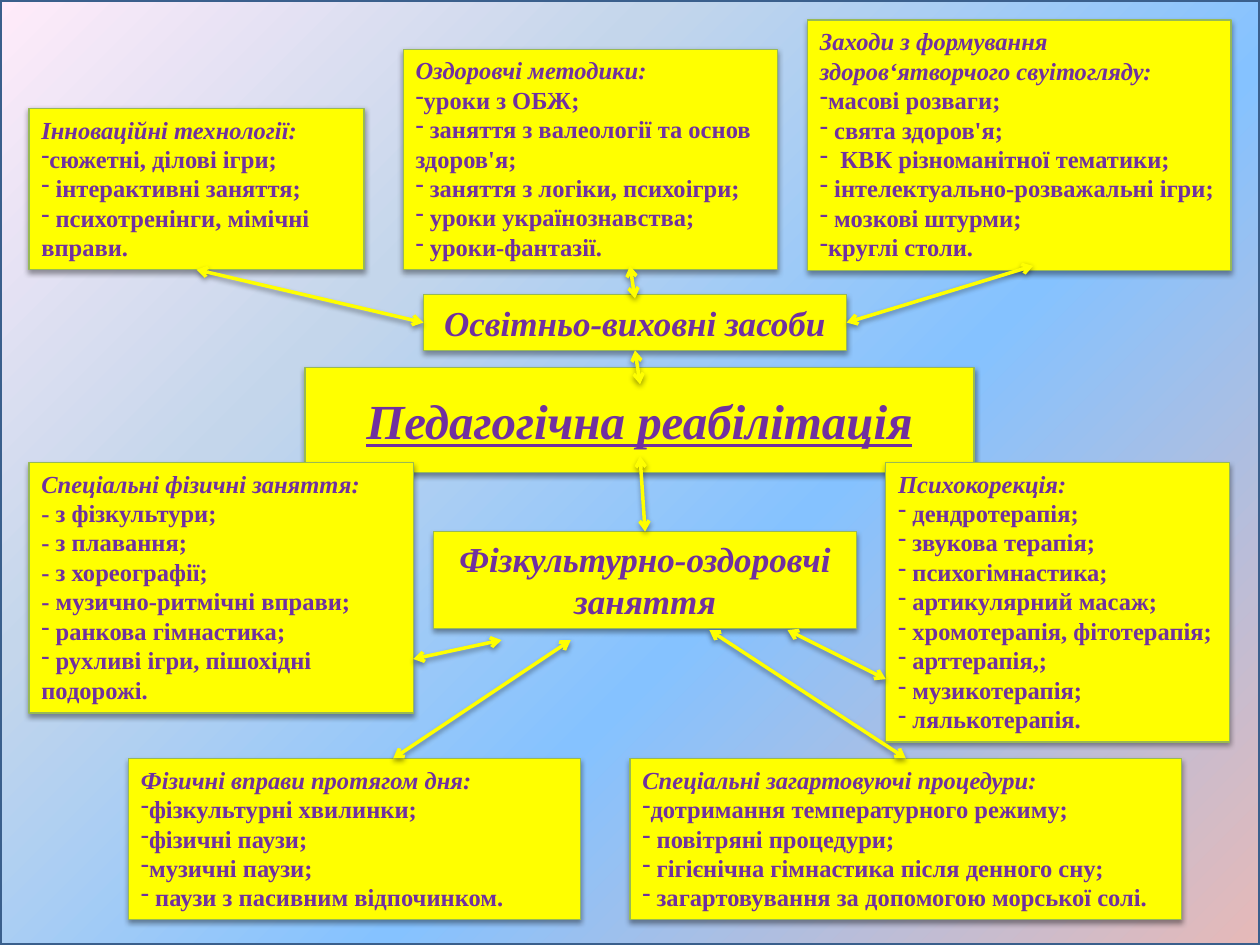
from lxml import etree
from pptx import Presentation
from pptx.dml.color import RGBColor
from pptx.enum import shapes, text
from pptx.oxml import parse_xml
from pptx.oxml.ns import nsdecls, qn
from pptx.util import Inches, Pt

COLORS = {"box": "FFFF00", "border": "98B955", "text": "7030A0",
          "arrow": "FFFF00", "frame": "3A5F8C", "shadow": "000000"}
GRADIENT = [(0, "254061"), (0, "E6B9B8"), (40, "85C2FF"), (70, "C4D6EB"), (100, "FFEBFA")]
FONT = "Times New Roman"

TITLE = ("Педагогічна реабілітація", (2.42, 3.05, 5.31, 0.57))
HEADINGS = [
    ("Фізкультурно-оздоровчі заняття", (3.44, 4.22, 3.36, 0.77)),
    ("Освітньо-виховні засоби", (3.36, 2.34, 3.36, 0.44)),
]
# Each list: place, heading, lines with a typed dash, lines with a dash bullet
LISTS = [
    ((0.23, 3.67, 3.05, 1.99), "Спеціальні фізичні заняття:",
     ["- з фізкультури;", "- з плавання;", "- з хореографії;", "- музично-ритмічні вправи;"],
     [" ранкова гімнастика;", " рухливі ігри, пішохідні подорожі."]),
    ((1.02, 6.02, 3.59, 1.28), "Фізичні вправи протягом дня:", [],
     ["фізкультурні хвилинки;", "фізичні паузи;", "музичні паузи;",
      " паузи з пасивним відпочинком."]),
    ((7.03, 3.67, 2.73, 2.22), "Психокорекція:", [],
     [" дендротерапія;", " звукова терапія;", " психогімнастика;", " артикулярний масаж;",
      " хромотерапія, фітотерапія;", " арттерапія,;", " музикотерапія;", " лялькотерапія."]),
    ((3.2, 0.39, 2.97, 1.75), "Оздоровчі методики:", [],
     ["уроки з ОБЖ;", " заняття з валеології та основ здоров'я;",
      " заняття з логіки, психоігри;", " уроки українознавства;", " уроки-фантазії."]),
    ((0.23, 0.86, 2.66, 1.28), "Інноваційні технології:", [],
     ["сюжетні, ділові ігри;", " інтерактивні заняття;", " психотренінги, мімічні вправи."]),
    ((6.41, 0.16, 3.36, 1.99), "Заходи з формування здоров‘ятворчого свуітогляду:", [],
     ["масові розваги;", " свята здоров'я;", "  КВК різноманітної тематики;",
      " інтелектуально-розважальні ігри;", " мозкові штурми;", "круглі столи."]),
    ((5, 6.02, 4.38, 1.28), "Спеціальні загартовуючі процедури:", [],
     ["дотримання температурного режиму;", " повітряні процедури;",
      " гігієнічна гімнастика після денного сну;",
      " загартовування за допомогою морської солі."]),
]
ARROWS = [
    (5.12, 4.22, 5.08, 3.62), (7.19, 6.02, 5.63, 5), (7.03, 5.39, 6.25, 5),
    (3.28, 5.23, 3.98, 5.08), (3.12, 6.02, 4.53, 5.08), (5.08, 3.05, 5.04, 2.78),
    (5.04, 2.37, 5, 2.11), (6.72, 2.56, 8.2, 2.11), (1.56, 2.14, 3.36, 2.56),
]


def rgb(name):
    return RGBColor.from_string(COLORS[name])


def add_shadow(properties):
    properties.append(parse_xml(
        f'<a:effectLst {nsdecls("a")}>'
        '<a:outerShdw blurRad="40000" dist="20000" dir="5400000" rotWithShape="0">'
        f'<a:srgbClr val="{COLORS["shadow"]}"><a:alpha val="38000"/></a:srgbClr>'
        '</a:outerShdw></a:effectLst>'))


def add_background(slide, deck):
    """Full-slide gradient rectangle, sent behind everything else."""
    panel = slide.shapes.add_shape(shapes.MSO_SHAPE.RECTANGLE, 0, 0,
                                   deck.slide_width, deck.slide_height)
    panel.shadow.inherit = False
    panel.line.color.rgb = rgb("frame")
    panel.line.width = Pt(2)
    stops = "".join(f'<a:gs pos="{share * 1000}"><a:srgbClr val="{color}"/></a:gs>'
                    for share, color in GRADIENT)
    gradient = parse_xml(
        f'<a:gradFill {nsdecls("a")} rotWithShape="1"><a:gsLst>{stops}</a:gsLst>'
        '<a:path path="circle"><a:fillToRect l="100000" t="100000"/></a:path></a:gradFill>')
    panel.element.spPr.find(qn("a:prstGeom")).addnext(gradient)
    slide.shapes.element.insert(2, panel.element)


def style_box(box):
    box.fill.solid()
    box.fill.fore_color.rgb = rgb("box")
    box.line.color.rgb = rgb("border")
    box.line.width = Pt(0.75)
    add_shadow(box.element.spPr)
    box.text_frame.word_wrap = True
    box.text_frame.auto_size = text.MSO_AUTO_SIZE.SHAPE_TO_FIT_TEXT


def style_text(para, size, italic=True, underline=None):
    for span in para.runs:
        font = span.font
        font.name, font.size, font.bold = FONT, Pt(size), True
        font.italic, font.underline = italic, underline
        font.color.rgb = rgb("text")


def add_box(slide, place):
    box = slide.shapes.add_textbox(*map(Inches, place))
    style_box(box)
    return box


def fill_title(slide, words, place):
    box = slide.shapes.title
    box.left, box.top, box.width, box.height = map(Inches, place)
    style_box(box)
    box.text_frame.text = words
    para = box.text_frame.paragraphs[0]
    para.alignment = text.PP_ALIGN.CENTER
    style_text(para, 28, underline=True)


def add_heading(slide, words, place):
    frame = add_box(slide, place).text_frame
    frame.text = words
    frame.paragraphs[0].alignment = text.PP_ALIGN.CENTER
    style_text(frame.paragraphs[0], 20)


def add_dash_bullet(para):
    properties = para._p.get_or_add_pPr()
    etree.SubElement(properties, qn("a:buFontTx"))
    etree.SubElement(properties, qn("a:buChar"), char="-")


def add_list(slide, place, heading, typed, bulleted):
    frame = add_box(slide, place).text_frame
    frame.text = "\n".join([heading, *typed, *bulleted])
    for index, para in enumerate(frame.paragraphs):
        style_text(para, 14, italic=index == 0)
        if index > len(typed):
            add_dash_bullet(para)


def add_arrow(slide, ends):
    """Double-headed straight arrow."""
    arrow = slide.shapes.add_connector(shapes.MSO_CONNECTOR.STRAIGHT, *map(Inches, ends))
    arrow.line.color.rgb = rgb("arrow")
    arrow.line.width = Pt(2)
    properties = arrow.element.spPr
    for end in ("a:headEnd", "a:tailEnd"):
        etree.SubElement(properties.find(qn("a:ln")), qn(end), type="arrow")
    add_shadow(properties)


def main():
    deck = Presentation()
    deck.slide_width, deck.slide_height = Inches(10), Inches(7.5)
    slide = deck.slides.add_slide(deck.slide_layouts.get_by_name("Title Only"))
    add_background(slide, deck)
    fill_title(slide, *TITLE)
    for heading in HEADINGS:
        add_heading(slide, *heading)
    for entry in LISTS:
        add_list(slide, *entry)
    for ends in ARROWS:
        add_arrow(slide, ends)
    deck.save("out.pptx")


if __name__ == "__main__":
    main()
